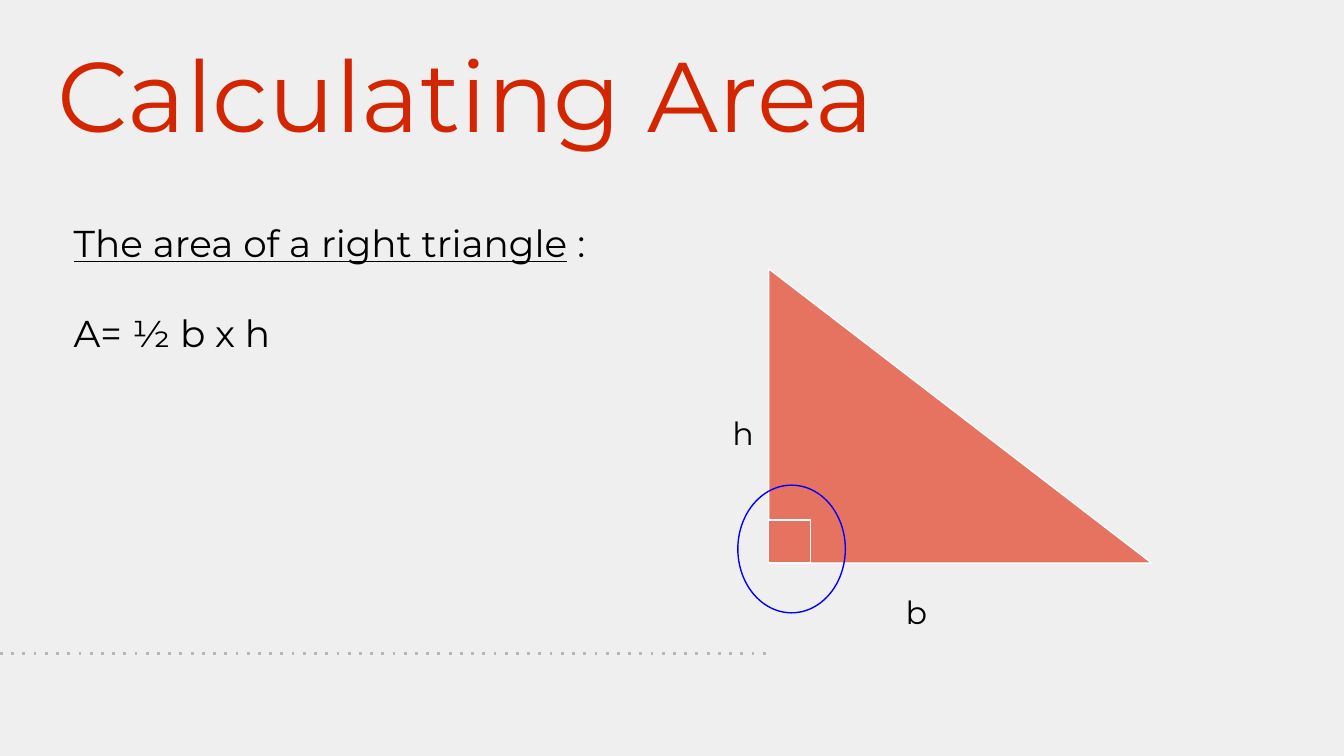
import dataclasses
from typing import Optional

import pptx
import pptx.dml.color
import pptx.enum.dml
import pptx.enum.shapes
import pptx.oxml
import pptx.oxml.ns
import pptx.util

SHAPE = pptx.enum.shapes.MSO_SHAPE
CELL = 0.1
COLUMNS, ROWS = 100, 56.25
FONT = "Montserrat"
RED, CORAL, WHITE, BLACK = "D32600", "E57360", "FFFFFF", "000000"
BLUE, GRAY, PAPER = "0000FF", "B7B7B7", "EFEFEF"


@dataclasses.dataclass(frozen=True)
class Area:
    """Place on the grid, in columns and rows."""

    column: float
    row: float
    columns: float
    rows: float


@dataclasses.dataclass(frozen=True)
class Run:
    """Piece of text with one format."""

    text: str
    underline: bool = False


@dataclasses.dataclass(frozen=True)
class Caption:
    """Text block whose paragraphs share one style."""

    area: Area
    paragraphs: tuple[tuple[Run, ...], ...]
    size: float
    color: str = BLACK
    line_spacing: float = 1.0
    gap: float = 0


@dataclasses.dataclass(frozen=True)
class Figure:
    """Outlined preset shape with an optional fill."""

    preset: SHAPE
    area: Area
    outline: str
    fill: Optional[str] = None


LEG_COLUMN, BASE_ROW = 57.2, 41.9
TRIANGLE = Area(LEG_COLUMN, BASE_ROW - 21.9, 28.5, 21.9)
RIGHT_ANGLE = Area(LEG_COLUMN, BASE_ROW - 3.2, 3.1, 3.2)
HIGHLIGHT = Area(54.9, 36.1, 8, 9.5)

FIGURES = (
    Figure(SHAPE.RIGHT_TRIANGLE, TRIANGLE, WHITE, CORAL),
    Figure(SHAPE.RECTANGLE, RIGHT_ANGLE, WHITE, CORAL),
    Figure(SHAPE.OVAL, HIGHLIGHT, BLUE),
)
CAPTIONS = (
    Caption(Area(3.3, 3.9, 92.1, 13.1), ((Run("Calculating Area"),),), 53, RED, 0.7),
    Caption(
        Area(4.5, 15.4, 42.4, 11.6),
        ((Run("The area of a right triangle", True), Run(" :")), (Run("A= ½ b x h"),)),
        20,
        gap=24,
    ),
    Caption(Area(66.4, 43.1, 4.9, 3.2), ((Run("b"),),), 17),
    Caption(Area(53.5, 29.8, 3.1, 3.2), ((Run("h"),),), 17),
)


def grid(cells: float) -> pptx.util.Length:
    """Turn grid cells into a length."""
    return pptx.util.Inches(cells * CELL)


def place(area: Area) -> tuple[pptx.util.Length, ...]:
    """Give left, top, width and height of an area."""
    return tuple(grid(cells) for cells in dataclasses.astuple(area))


def rgb(color: str) -> pptx.dml.color.RGBColor:
    """Turn a hex string into a colour."""
    return pptx.dml.color.RGBColor.from_string(color)


def draw_rule(slide, row: float, end_column: float) -> None:
    """Draw the dotted rule from the slide's left edge."""
    rule = slide.shapes.add_connector(
        pptx.enum.shapes.MSO_CONNECTOR.STRAIGHT, 0, grid(row), grid(end_column), grid(row)
    )
    rule.line.color.rgb = rgb(GRAY)
    rule.line.width = pptx.util.Pt(1.5)
    rule.line.dash_style = pptx.enum.dml.MSO_LINE.ROUND_DOT
    properties = rule.element.spPr
    properties.find(".//" + pptx.oxml.ns.qn("a:prstDash")).set("val", "dot")
    properties.append(
        pptx.oxml.parse_xml(f"<a:effectLst {pptx.oxml.ns.nsdecls('a')}/>")
    )


def draw_figure(slide, figure: Figure) -> None:
    """Draw one outlined shape."""
    outlined = slide.shapes.add_shape(figure.preset, *place(figure.area))
    outlined.shadow.inherit = False
    outlined.line.color.rgb = rgb(figure.outline)
    outlined.line.width = pptx.util.Pt(0.75)
    if figure.fill:
        outlined.fill.solid()
        outlined.fill.fore_color.rgb = rgb(figure.fill)
    else:
        outlined.fill.background()


def draw_caption(slide, caption: Caption) -> None:
    """Write one text block run by run."""
    frame = slide.shapes.add_textbox(*place(caption.area)).text_frame
    frame.word_wrap = True
    frame.margin_left = frame.margin_right = grid(1)
    frame.margin_top = frame.margin_bottom = grid(1)
    for index, runs in enumerate(caption.paragraphs):
        paragraph = frame.add_paragraph() if index else frame.paragraphs[0]
        paragraph.line_spacing = caption.line_spacing
        paragraph.space_before = pptx.util.Pt(caption.gap if index else 0)
        for piece in runs:
            run = paragraph.add_run()
            run.text = piece.text
            run.font.name = FONT
            run.font.size = pptx.util.Pt(caption.size)
            run.font.color.rgb = rgb(caption.color)
            run.font.underline = piece.underline


def main() -> None:
    """Build and save the slide."""
    deck = pptx.Presentation()
    deck.slide_width, deck.slide_height = grid(COLUMNS), grid(ROWS)
    slide = deck.slides.add_slide(deck.slide_layouts[6])
    slide.background.fill.solid()
    slide.background.fill.fore_color.rgb = rgb(PAPER)
    draw_rule(slide, 48.6, LEG_COLUMN)
    for figure in FIGURES:
        draw_figure(slide, figure)
    for caption in CAPTIONS:
        draw_caption(slide, caption)
    deck.save("out.pptx")


if __name__ == "__main__":
    main()
